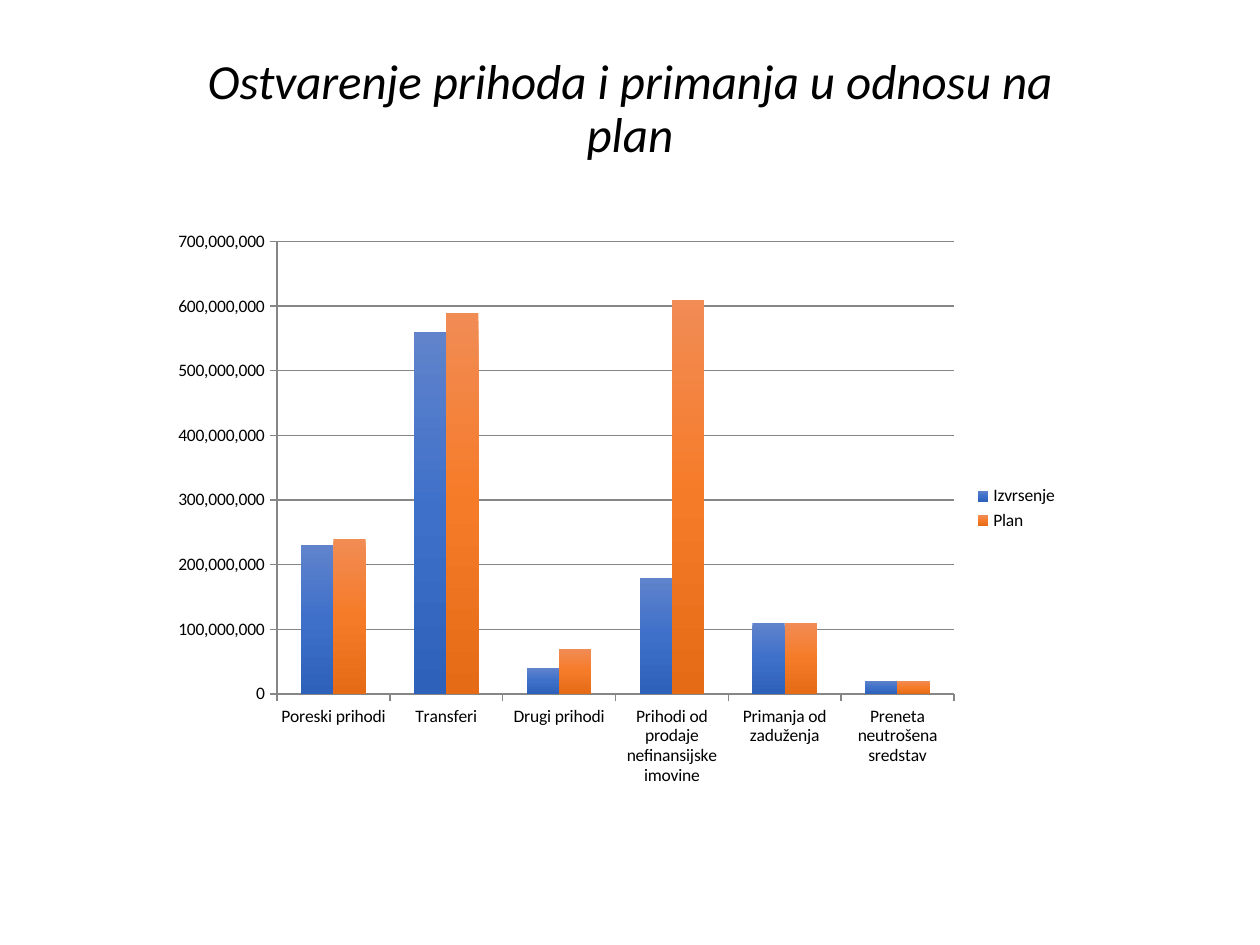
from copy import deepcopy
from dataclasses import dataclass

from pptx import Presentation
from pptx.chart.data import CategoryChartData
from pptx.dml.color import RGBColor
from pptx.enum.chart import XL_CHART_TYPE, XL_LEGEND_POSITION, XL_TICK_MARK
from pptx.enum.text import MSO_ANCHOR, PP_ALIGN
from pptx.util import Inches, Pt


@dataclass(frozen=True)
class Theme:
    font: str = "Calibri"
    ink: str = "000000"
    rule: str = "868686"
    title: int = 28
    label: int = 10
    bars: tuple = (("6083CB", "3E70CA", "2E61BA"),
                   ("F18C55", "F67B28", "E56B17"))


THEME = Theme()
WIDE, HIGH = 10, 7.5

TITLE = "Ostvarenje prihoda i primanja u odnosu na plan"
GROUPS = ["Poreski prihodi", "Transferi", "Drugi prihodi",
          "Prihodi od prodaje nefinansijske imovine",
          "Primanja od zaduženja", "Preneta neutrošena sredstav"]
MILLION = 1_000_000
SERIES = {"Izvrsenje": (230, 560, 40, 180, 110, 20),
          "Plan": (240, 590, 70, 610, 110, 20)}


def place(left, top, width, height):
    """Turn shares of the slide into lengths."""
    return [Inches(share * side) for share, side in
            zip((left, top, width, height), (WIDE, HIGH, WIDE, HIGH))]


def apply(target, values):
    for name, value in values.items():
        setattr(target, name, value)


def style(font, size, **extra):
    apply(font, {"name": THEME.font, "size": Pt(size), **extra})
    font.color.rgb = RGBColor.from_string(THEME.ink)


def add_title(slide, text, box):
    frame = slide.shapes.add_textbox(*place(*box)).text_frame
    apply(frame, {"word_wrap": True, "vertical_anchor": MSO_ANCHOR.BOTTOM})
    line = frame.paragraphs[0]
    apply(line, {"text": text, "alignment": PP_ALIGN.CENTER,
                 "line_spacing": 0.9})
    style(line.runs[0].font, THEME.title, italic=True)


def shade(series, colors):
    """Fill the bars with an even gradient from top to bottom."""
    fill = series.format.fill
    fill.gradient()
    fill.gradient_angle = 270
    stops = series._element.xpath(".//a:gsLst")[0]
    stops.append(deepcopy(stops[-1]))
    for num, (stop, color) in enumerate(zip(fill.gradient_stops, colors)):
        stop.color.rgb = RGBColor.from_string(color)
        stop.position = num / (len(colors) - 1)


def rule(line):
    line.color.rgb = RGBColor.from_string(THEME.rule)
    line.width = Pt(0.75)


def add_bars(slide, box):
    data = CategoryChartData(number_format="#,##0")
    data.categories = GROUPS
    for name, values in SERIES.items():
        data.add_series(name, [value * MILLION for value in values])
    chart = slide.shapes.add_chart(
        XL_CHART_TYPE.COLUMN_CLUSTERED, *place(*box), data).chart
    apply(chart, {"has_title": False, "has_legend": True})
    style(chart.font, THEME.label)
    apply(chart.legend, {"position": XL_LEGEND_POSITION.RIGHT,
                         "include_in_layout": False})

    # Bars
    plot = chart.plots[0]
    apply(plot, {"gap_width": 150, "overlap": 0, "vary_by_categories": False})
    for series, colors in zip(plot.series, THEME.bars):
        shade(series, colors)

    # Axes and grid
    for axis in (chart.category_axis, chart.value_axis):
        apply(axis, {"major_tick_mark": XL_TICK_MARK.OUTSIDE,
                     "minor_tick_mark": XL_TICK_MARK.NONE})
        rule(axis.format.line)
    scale = chart.value_axis
    apply(scale, {"minimum_scale": 0, "maximum_scale": 700 * MILLION,
                  "major_unit": 100 * MILLION, "has_major_gridlines": True})
    apply(scale.tick_labels, {"number_format": "#,##0",
                              "number_format_is_linked": False})
    rule(scale.major_gridlines.format.line)


def main():
    deck = Presentation()
    apply(deck, {"slide_width": Inches(WIDE), "slide_height": Inches(HIGH)})
    slide = deck.slides.add_slide(deck.slide_layouts[6])
    add_title(slide, TITLE, (1 / 8, 0.156, 3 / 4, 0.023))
    add_bars(slide, (0.127, 0.233, 0.723, 0.61))
    deck.save("out.pptx")


if __name__ == "__main__":
    main()
